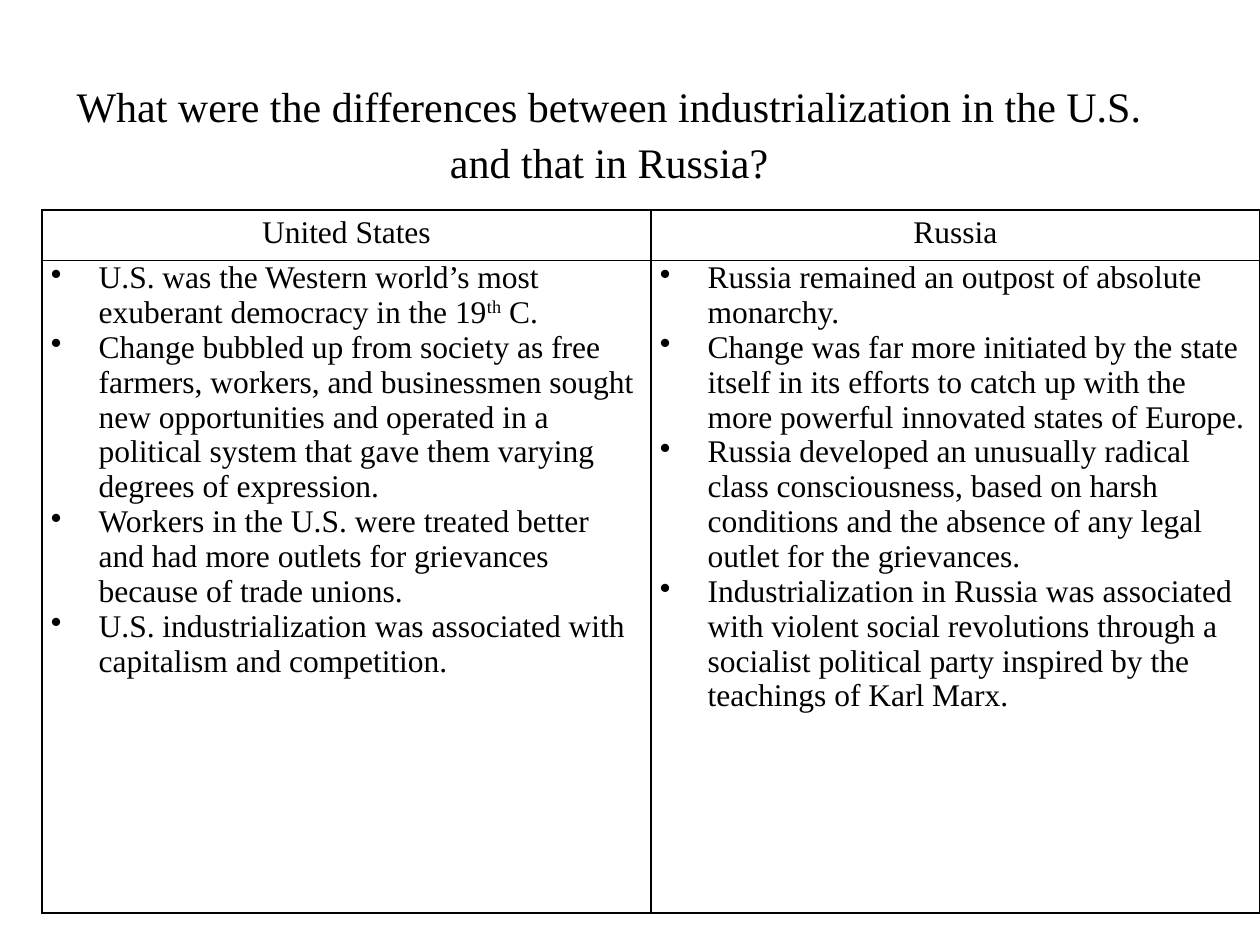
"""Build a slide comparing industrialization in the U.S. and Russia."""
import pptx
import pptx.dml.color
import pptx.enum.text
import pptx.oxml
import pptx.oxml.ns
import pptx.util

TITLE = "What were the differences between industrialization in the U.S. and that in Russia?"
COLUMNS = {
    "United States": [
        ("U.S. was the Western world’s most exuberant democracy in the 19", "th", " C."),
        "Change bubbled up from society as free farmers, workers, and businessmen sought new "
        "opportunities and operated in a political system that gave them varying degrees of expression.",
        "Workers in the U.S. were treated better and had more outlets for grievances because of trade unions.",
        "U.S. industrialization was associated with capitalism and competition.",
    ],
    "Russia": [
        "Russia remained an outpost of absolute monarchy.",
        "Change was far more initiated by the state itself in its efforts to catch up with the more "
        "powerful innovated states of Europe.",
        "Russia developed an unusually radical class consciousness, based on harsh conditions and the "
        "absence of any legal outlet for the grievances.",
        "Industrialization in Russia was associated with violent social revolutions through a socialist "
        "political party inspired by the teachings of Karl Marx.",
    ],
}
BLACK = pptx.dml.color.RGBColor(0, 0, 0)
FONT = "Times New Roman"
CENTER = pptx.enum.text.PP_ALIGN.CENTER
LEFT = pptx.enum.text.PP_ALIGN.LEFT
INCH = pptx.util.Inches(1)
SLIDE_W, SLIDE_H = 10 * INCH, int(7.5 * INCH)
TABLE_X, TABLE_Y = SLIDE_W // 30, SLIDE_H * 2 // 9
ROW_HEIGHTS = [int(0.4 * INCH), int(5.18 * INCH)]
INDENT = int(0.38 * INCH)


def write(p, text, size=18, align=LEFT, spacing=1.0, bullet=False):
    """Fill a paragraph; a tuple's second part is superscript."""
    p.alignment, p.line_spacing = align, spacing
    if bullet:
        pPr = p._p.get_or_add_pPr()
        pPr.set("marL", str(INDENT))
        pPr.set("indent", str(-INDENT))
        pPr.append(pptx.oxml.parse_xml(f'<a:buChar {pptx.oxml.ns.nsdecls("a")} char="•"/>'))
    for i, part in enumerate((text,) if isinstance(text, str) else text):
        r = p.add_run()
        r.text = part
        r.font.name, r.font.size = FONT, pptx.util.Pt(size)
        r.font.bold = False
        r.font.color.rgb = BLACK
        if i == 1:
            r._r.get_or_add_rPr().set("baseline", "30000")


def style_cell(cell):
    """Give a cell its margins, black borders and no fill."""
    cell.margin_left = cell.margin_right = int(0.07 * INCH)
    cell.margin_top = cell.margin_bottom = 0
    tcPr = cell._tc.get_or_add_tcPr()
    for side in ("lnL", "lnR", "lnT", "lnB"):
        tcPr.append(pptx.oxml.parse_xml(
            f'<a:{side} {pptx.oxml.ns.nsdecls("a")} w="{pptx.util.Pt(1)}">'
            f'<a:solidFill><a:srgbClr val="{BLACK}"/></a:solidFill></a:{side}>'))
    cell.fill.background()


def main():
    """Lay out the title and the table, then save."""
    prs = pptx.Presentation()
    prs.slide_width, prs.slide_height = SLIDE_W, SLIDE_H
    s = prs.slides.add_slide(prs.slide_layouts[6])

    title = s.shapes.add_textbox(int(0.42 * INCH), SLIDE_H // 30, int(8.83 * INCH), int(1.58 * INCH))
    tf = title.text_frame
    tf.word_wrap = True
    tf.vertical_anchor = pptx.enum.text.MSO_ANCHOR.MIDDLE
    write(tf.paragraphs[0], TITLE, size=24, align=CENTER, spacing=1.1)

    table = s.shapes.add_table(len(ROW_HEIGHTS), len(COLUMNS), TABLE_X, TABLE_Y,
                               SLIDE_W - TABLE_X, sum(ROW_HEIGHTS)).table
    table.first_row = table.horz_banding = False
    for row, height in zip(table.rows, ROW_HEIGHTS):
        row.height = height
    for col, (heading, points) in enumerate(COLUMNS.items()):
        head, body = table.cell(0, col), table.cell(1, col)
        style_cell(head)
        style_cell(body)
        write(head.text_frame.paragraphs[0], heading, align=CENTER, spacing=1.15)
        tf = body.text_frame
        for i, point in enumerate(points):
            write(tf.add_paragraph() if i else tf.paragraphs[0], point, bullet=True)
    prs.save("out.pptx")


if __name__ == "__main__":
    main()
